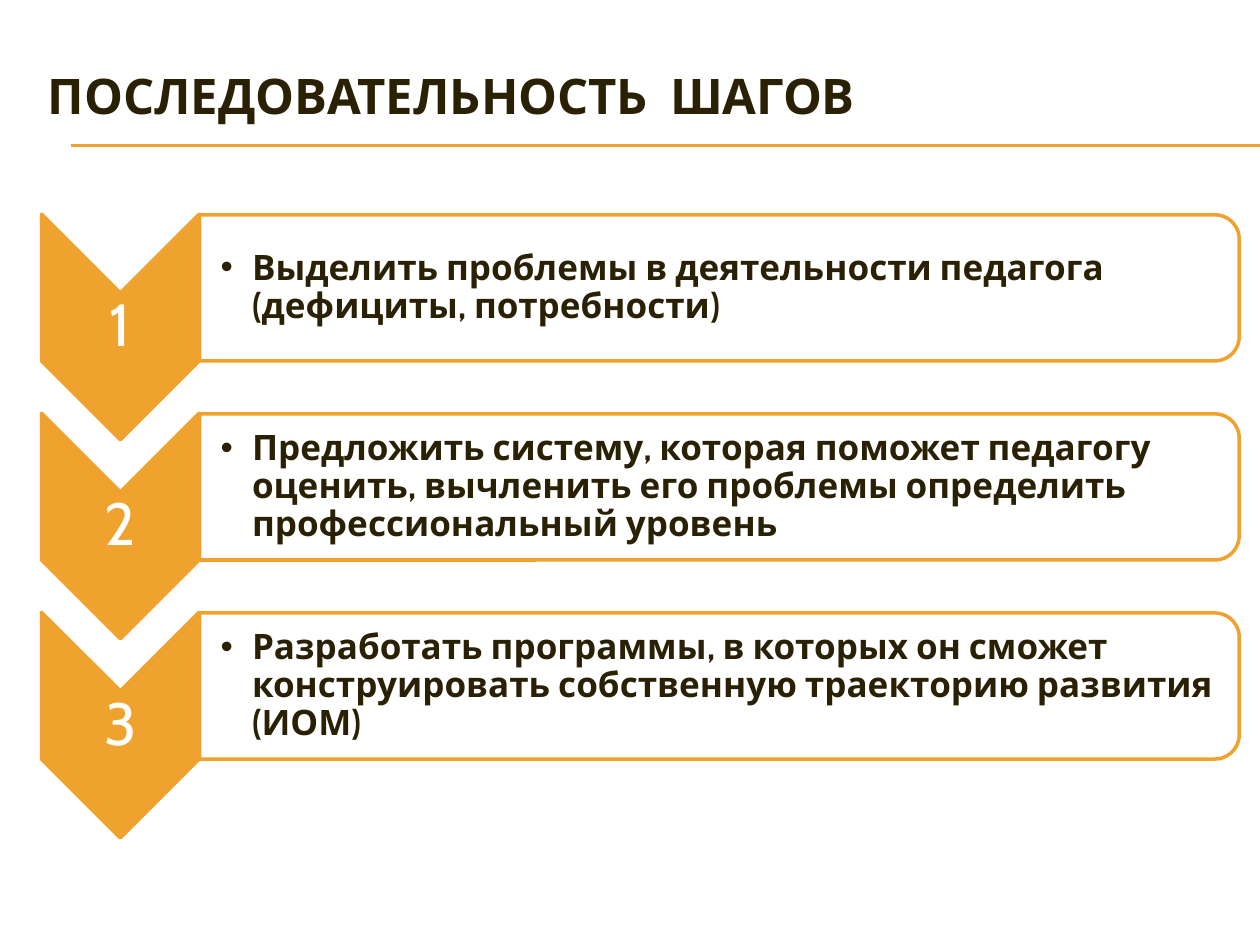
from dataclasses import dataclass

from lxml.etree import SubElement
from pptx import Presentation
from pptx.dml.color import RGBColor
from pptx.enum.shapes import MSO_CONNECTOR, MSO_SHAPE
from pptx.enum.text import MSO_ANCHOR, PP_ALIGN
from pptx.oxml.ns import qn
from pptx.util import Inches, Pt

ORANGE = "F0A22E"
DARK = "2A2003"
WHITE = "FFFFFF"
FIRST_TOP = 1.97
STEP_PITCH = 1.58


@dataclass(frozen=True)
class Box:
    left: float
    top: float
    width: float
    height: float

    def lengths(self) -> list:
        return [Inches(value) for value in (self.left, self.top, self.width, self.height)]


@dataclass(frozen=True)
class Step:
    number: str
    description: str


STEPS = [
    Step("1", "Выделить проблемы в деятельности педагога (дефициты, потребности)"),
    Step("2", "Предложить систему, которая поможет педагогу оценить, вычленить его "
              "проблемы определить профессиональный уровень"),
    Step("3", "Разработать программы, в которых он сможет конструировать собственную "
              "траекторию развития (ИОМ)"),
]

TITLE_FONT = {"name": "Cabin", "size": Pt(28), "bold": True}
NUMBER_FONT = {"name": "Cabin", "size": Pt(34), "bold": False}
DESCRIPTION_FONT = {"name": "Cabin", "size": Pt(20), "bold": True}
NUMBER_PARAGRAPH = {"alignment": PP_ALIGN.CENTER, "line_spacing": 0.9}
DESCRIPTION_PARAGRAPH = {"alignment": PP_ALIGN.LEFT, "line_spacing": 0.9}


def color(value: str) -> RGBColor:
    return RGBColor.from_string(value)


def apply_format(target, values: dict) -> None:
    for name, value in values.items():
        setattr(target, name, value)


def frame_format(left_inset: float, inset: float) -> dict:
    return {
        "word_wrap": True,
        "vertical_anchor": MSO_ANCHOR.MIDDLE,
        "margin_left": Inches(left_inset),
        "margin_top": Inches(inset),
        "margin_right": Inches(inset),
        "margin_bottom": Inches(inset),
    }


def write_text(shape, text: str, frame: dict, paragraph_format: dict, font: dict, font_color: str):
    apply_format(shape.text_frame, frame)
    paragraph = shape.text_frame.paragraphs[0]
    apply_format(paragraph, paragraph_format)
    run = paragraph.add_run()
    run.text = text
    apply_format(run.font, font)
    run.font.color.rgb = color(font_color)
    return paragraph


def add_bullet(paragraph) -> None:
    properties = paragraph._p.get_or_add_pPr()
    properties.set("marL", str(Inches(0.25)))
    properties.set("indent", str(-Inches(0.25)))
    SubElement(properties, qn("a:buFont"), typeface="Arial")
    SubElement(properties, qn("a:buChar"), char="•")


def add_title(slide, text: str) -> None:
    title = slide.shapes.title
    apply_format(title, dict(zip(("left", "top", "width", "height"),
                                 Box(0.28, 0.29, 9.5, 0.92).lengths())))
    write_text(title, text, frame_format(0.1, 0.05), {"alignment": PP_ALIGN.LEFT},
               TITLE_FONT, DARK)


def add_rule(slide, top: float) -> None:
    rule = slide.shapes.add_connector(MSO_CONNECTOR.STRAIGHT, Inches(0.56), Inches(top),
                                      Inches(10), Inches(top))
    rule.line.color.rgb = color(ORANGE)
    rule.line.width = Pt(0.75)
    SubElement(rule._element.spPr, qn("a:effectLst"))


def add_turned_shape(slide, kind: MSO_SHAPE, box: Box, fill: str):
    shape = slide.shapes.add_shape(kind, *box.lengths())
    shape.rotation = 90
    shape.shadow.inherit = False
    shape.fill.solid()
    shape.fill.fore_color.rgb = color(fill)
    shape.line.color.rgb = color(ORANGE)
    shape.line.width = Pt(2)
    return shape


def add_step(slide, step: Step, top: float) -> None:
    add_turned_shape(slide, MSO_SHAPE.CHEVRON, Box(0.06, top, 1.79, 1.25), ORANGE)
    number = slide.shapes.add_textbox(*Box(0.33, top + 0.36, 1.25, 0.54).lengths())
    write_text(number, step.number, frame_format(0.02, 0.02), NUMBER_PARAGRAPH,
               NUMBER_FONT, WHITE)

    panel = add_turned_shape(slide, MSO_SHAPE.ROUND_2_SAME_RECTANGLE,
                             Box(5.13, top - 3.81, 1.16, 8.25), WHITE)
    fill_color = panel._element.spPr.find(qn("a:solidFill")).find(qn("a:srgbClr"))
    SubElement(fill_color, qn("a:alpha"), val="90000")
    description = slide.shapes.add_textbox(*Box(1.59, top - 0.21, 8.19, 1.05).lengths())
    paragraph = write_text(description, step.description, frame_format(0.16, 0.01),
                           DESCRIPTION_PARAGRAPH, DESCRIPTION_FONT, DARK)
    add_bullet(paragraph)


def main() -> None:
    presentation = Presentation()
    presentation.slide_width = Inches(10)
    presentation.slide_height = Inches(7.5)
    slide = presentation.slides.add_slide(presentation.slide_layouts[5])
    for top in (1.15, 1.16):
        add_rule(slide, top)
    add_title(slide, "ПОСЛЕДОВАТЕЛЬНОСТЬ  ШАГОВ")
    for index, step in enumerate(STEPS):
        add_step(slide, step, FIRST_TOP + index * STEP_PITCH)
    presentation.save("out.pptx")


if __name__ == "__main__":
    main()
